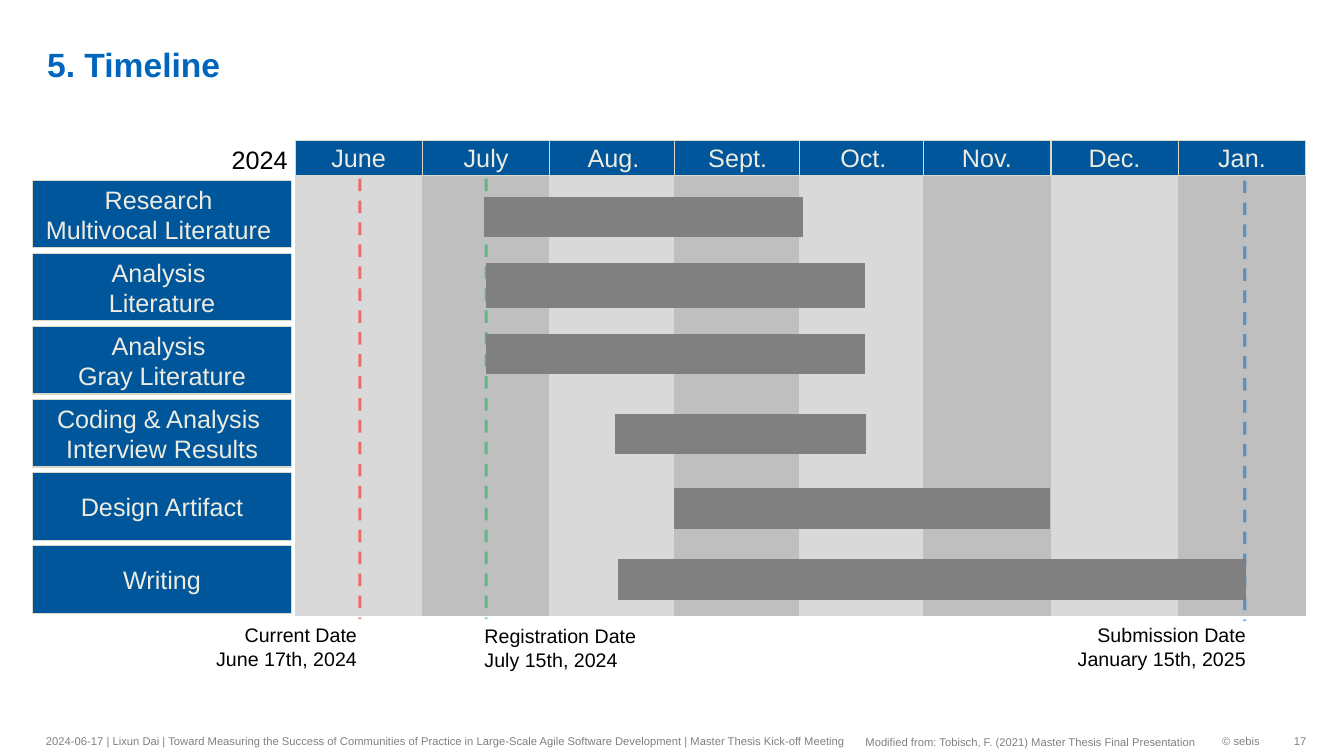
from dataclasses import dataclass

from lxml.etree import SubElement
from pptx import Presentation
from pptx.dml.color import RGBColor
from pptx.enum.dml import MSO_LINE
from pptx.enum.shapes import MSO_CONNECTOR, MSO_SHAPE
from pptx.enum.text import MSO_ANCHOR, PP_ALIGN
from pptx.oxml.ns import qn
from pptx.shapes.autoshape import Shape
from pptx.slide import Slide
from pptx.text.text import TextFrame
from pptx.util import Cm, Pt


@dataclass(frozen=True)
class Theme:
    font: str = "Arial"
    title_color: str = "0065BD"
    header_fill: str = "00569B"
    header_line: str = "DAD7CB"
    header_text: str = "EEECE1"
    light_column: str = "D9D9D9"
    dark_column: str = "BFBFBF"
    gray: str = "808080"
    black: str = "000000"
    current: str = "FF0000"
    registration: str = "00B050"
    submission: str = "0065BD"
    title_size: float = 24
    label_size: float = 18
    date_size: float = 14
    footer_size: float = 8
    outline: float = 0.75
    marker_width: float = 2.25


@dataclass(frozen=True)
class Box:
    left: float
    top: float
    width: float
    height: float


@dataclass(frozen=True)
class Month:
    name: str
    left: float


@dataclass(frozen=True)
class Task:
    label: str
    bar: Box


@dataclass(frozen=True)
class Milestone:
    label: str
    x: float
    top: float
    color: str
    label_box: Box
    align: PP_ALIGN


@dataclass(frozen=True)
class Caption:
    text: str
    box: Box
    size: float
    color: str
    bold: bool = False
    align: PP_ALIGN = PP_ALIGN.LEFT
    anchor: MSO_ANCHOR = MSO_ANCHOR.MIDDLE
    wrap: bool = True
    inset_right: float = 0.25
    inset_vertical: float = 0.13


THEME = Theme()
MONTH_WIDTH, HEADER_TOP, HEADER_HEIGHT = 3.2, 3.53, 0.89
COLUMN_TOP, COLUMN_HEIGHT = 4.4, 11.1
TASK_LEFT, TASK_TOP, TASK_WIDTH, TASK_HEIGHT, TASK_PITCH = 0.82, 4.55, 6.53, 1.7, 1.84
MARKER_HEIGHT = 11.1

MONTHS = (
    Month("June", 7.44), Month("July", 10.65), Month("Aug.", 13.86), Month("Sept.", 16.99),
    Month("Oct.", 20.16), Month("Nov.", 23.27), Month("Dec.", 26.49), Month("Jan.", 29.7),
)

TASKS = (
    Task("Research \nMultivocal Literature ", Box(12.22, 4.98, 8, 0.99)),
    Task("Analysis \nLiterature", Box(12.27, 6.65, 9.53, 1.09)),
    Task("Analysis \nGray Literature", Box(12.27, 8.43, 9.53, 0.99)),
    Task("Coding & Analysis \nInterview Results", Box(15.5, 10.44, 6.32, 0.99)),
    Task("Design Artifact", Box(17, 12.32, 9.45, 0.99)),
    Task("Writing", Box(15.58, 14.1, 15.8, 1.02)),
)

MILESTONES = (
    Milestone("Current Date\nJune 17th, 2024", 9.07, 4.5, THEME.current,
              Box(2.9, 15.57, 6.35, 1.47), PP_ALIGN.RIGHT),
    Milestone("Registration Date\nJuly 15th, 2024", 12.25, 4.5, THEME.registration,
              Box(11.96, 15.6, 4.37, 1.45), PP_ALIGN.LEFT),
    Milestone("Submission Date\nJanuary 15th, 2025", 31.37, 4.55, THEME.submission,
              Box(25.3, 15.57, 6.35, 1.45), PP_ALIGN.RIGHT),
)

CAPTIONS = (
    Caption("5. Timeline", Box(0.94, 0.13, 29.41, 2), THEME.title_size, THEME.title_color,
            bold=True, anchor=MSO_ANCHOR.BOTTOM, inset_vertical=0),
    Caption("2024", Box(5.59, 3.51, 1.93, 1.02), THEME.label_size, THEME.black,
            anchor=MSO_ANCHOR.TOP, wrap=False),
    Caption("2024-06-17 | Lixun Dai | Toward Measuring the Success of Communities of Practice in "
            "Large-Scale Agile Software Development | Master Thesis Kick-off Meeting",
            Box(0.91, 18.24, 25.15, 0.89), THEME.footer_size, THEME.gray),
    Caption("Modified from: Tobisch, F. (2021) Master Thesis Final Presentation",
            Box(21.56, 18.39, 9, 0.6), THEME.footer_size, THEME.gray,
            anchor=MSO_ANCHOR.TOP, wrap=False),
    Caption("© sebis", Box(26.06, 18.26, 5.94, 0.81), THEME.footer_size, THEME.gray,
            align=PP_ALIGN.RIGHT),
    Caption("17", Box(32, 18.26, 0.92, 0.81), THEME.footer_size, THEME.gray,
            align=PP_ALIGN.RIGHT, inset_right=0),
)


def write_text(frame: TextFrame, text: str, *, size: float, color: str,
               bold: bool = False, align: PP_ALIGN = PP_ALIGN.LEFT) -> None:
    """Fill a frame with one formatted paragraph for each line of text."""
    for index, line in enumerate(text.split("\n")):
        para = frame.add_paragraph() if index else frame.paragraphs[0]
        para.alignment = align
        span = para.add_run()
        span.text = line
        span.font.name = THEME.font
        span.font.size = Pt(size)
        span.font.bold = bold
        span.font.color.rgb = RGBColor.from_string(color)


def add_block(page: Slide, box: Box, fill: str, line: str) -> Shape:
    """Draw a filled and outlined rectangle."""
    block = page.shapes.add_shape(
        MSO_SHAPE.RECTANGLE, Cm(box.left), Cm(box.top), Cm(box.width), Cm(box.height))
    block.shadow.inherit = False
    block.fill.solid()
    block.fill.fore_color.rgb = RGBColor.from_string(fill)
    block.line.color.rgb = RGBColor.from_string(line)
    block.line.width = Pt(THEME.outline)
    return block


def add_label(page: Slide, box: Box, text: str) -> None:
    """Draw a blue heading block with centred text."""
    frame = add_block(page, box, THEME.header_fill, THEME.header_line).text_frame
    frame.word_wrap = True
    frame.vertical_anchor = MSO_ANCHOR.MIDDLE
    write_text(frame, text, size=THEME.label_size, color=THEME.header_text,
               align=PP_ALIGN.CENTER)


def add_caption(page: Slide, caption: Caption) -> None:
    """Place a text box without fill or outline."""
    box = caption.box
    frame = page.shapes.add_textbox(
        Cm(box.left), Cm(box.top), Cm(box.width), Cm(box.height)).text_frame
    frame.word_wrap = caption.wrap
    frame.vertical_anchor = caption.anchor
    frame.margin_right = Cm(caption.inset_right)
    frame.margin_top = frame.margin_bottom = Cm(caption.inset_vertical)
    write_text(frame, caption.text, size=caption.size, color=caption.color,
               bold=caption.bold, align=caption.align)


def add_milestone(page: Slide, milestone: Milestone) -> None:
    """Draw a translucent dashed date line and its label."""
    marker = page.shapes.add_connector(
        MSO_CONNECTOR.STRAIGHT, Cm(milestone.x), Cm(milestone.top),
        Cm(milestone.x), Cm(milestone.top + MARKER_HEIGHT))
    marker.line.color.rgb = RGBColor.from_string(milestone.color)
    marker.line.width = Pt(THEME.marker_width)
    marker.line.dash_style = MSO_LINE.DASH
    properties = marker._element.spPr
    SubElement(next(properties.iter(qn("a:srgbClr"))), qn("a:alpha"), val="50000")
    SubElement(properties, qn("a:effectLst"))
    add_caption(page, Caption(milestone.label, milestone.label_box, THEME.date_size, THEME.black,
                              align=milestone.align, anchor=MSO_ANCHOR.TOP))


def main() -> None:
    """Build the timeline slide and save it."""
    deck = Presentation()
    deck.slide_width, deck.slide_height = Cm(33.87), Cm(19.05)
    page = deck.slides.add_slide(deck.slide_layouts[6])
    for index, month in enumerate(MONTHS):
        fill = THEME.dark_column if index % 2 else THEME.light_column
        add_block(page, Box(month.left, COLUMN_TOP, MONTH_WIDTH, COLUMN_HEIGHT), fill, fill)
        add_label(page, Box(month.left, HEADER_TOP, MONTH_WIDTH, HEADER_HEIGHT), month.name)
    for milestone in MILESTONES:
        add_milestone(page, milestone)
    for index, task in enumerate(TASKS):
        top = TASK_TOP + index * TASK_PITCH
        add_label(page, Box(TASK_LEFT, top, TASK_WIDTH, TASK_HEIGHT), task.label)
        add_block(page, task.bar, THEME.gray, THEME.gray)
    for caption in CAPTIONS:
        add_caption(page, caption)
    deck.save("out.pptx")


if __name__ == "__main__":
    main()
